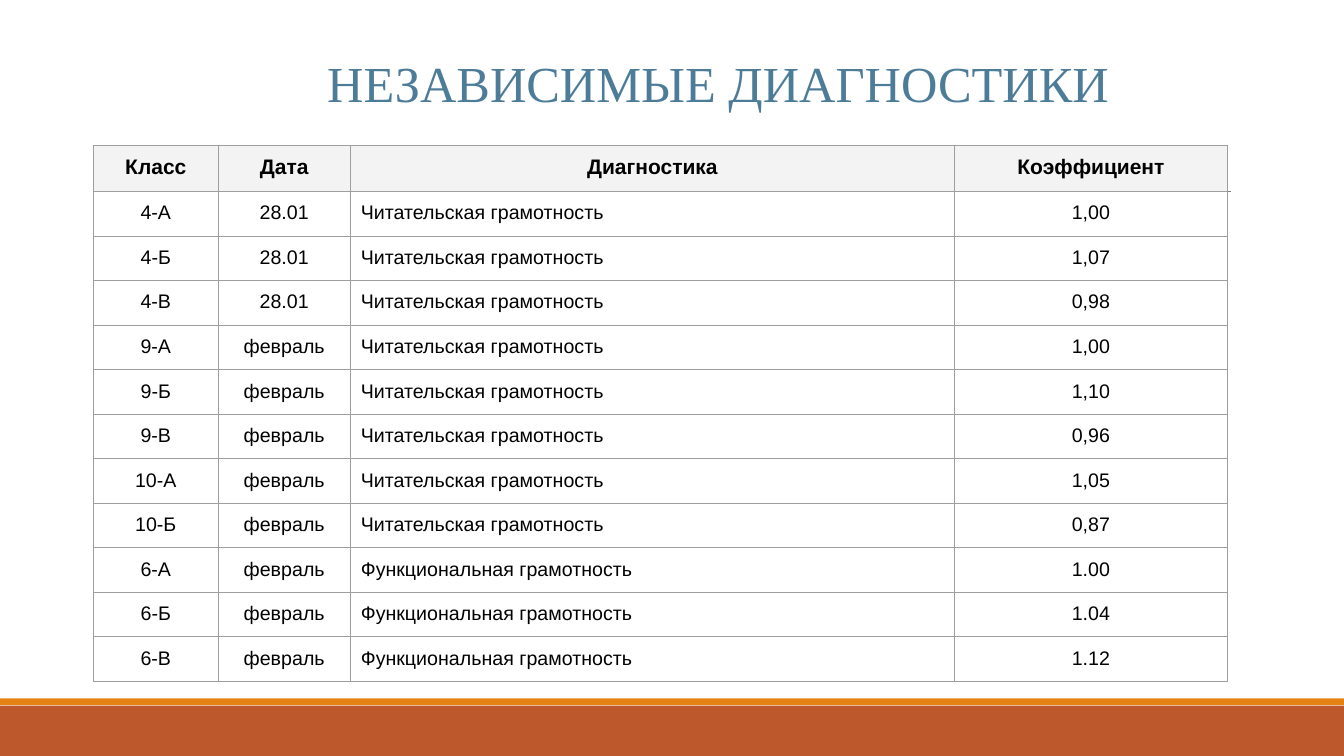
from lxml.etree import SubElement
from pptx import Presentation
from pptx.dml.color import RGBColor
from pptx.enum.shapes import MSO_CONNECTOR, MSO_SHAPE
from pptx.enum.text import MSO_ANCHOR, PP_ALIGN
from pptx.oxml.ns import qn
from pptx.util import Pt

RUST = RGBColor(0xBD, 0x58, 0x2C)
ORANGE = RGBColor(0xE4, 0x83, 0x12)
RULE_GREY = RGBColor(0x7F, 0x7F, 0x7F)
BORDER_GREY = RGBColor(0x9E, 0x9E, 0x9E)
HEADER_GREY = RGBColor(0xF3, 0xF3, 0xF3)
TITLE_BLUE = RGBColor(0x4D, 0x7C, 0x99)
BLACK = RGBColor(0, 0, 0)

HEADINGS = ("Класс", "Дата", "Диагностика", "Коэффициент")
READING = "Читательская грамотность"
FUNCTIONAL = "Функциональная грамотность"
DIAGNOSTICS = [
    ("28.01", READING, {"4-А": "1,00", "4-Б": "1,07", "4-В": "0,98"}),
    ("февраль", READING, {"9-А": "1,00", "9-Б": "1,10", "9-В": "0,96",
                          "10-А": "1,05", "10-Б": "0,87"}),
    ("февраль", FUNCTIONAL, {"6-А": "1.00", "6-Б": "1.04", "6-В": "1.12"}),
]


class DiagnosticsSlide:
    """Draws styled elements on one slide, with lengths in points."""

    title_font = "Times New Roman"
    table_font = "Arial"
    line_width = 0.75
    cell_margin = 7.5

    def __init__(self, slide):
        self.slide = slide

    def band(self, left, top, width, height, colour):
        stripe = self.slide.shapes.add_shape(
            MSO_SHAPE.RECTANGLE, Pt(left), Pt(top), Pt(width), Pt(height))
        stripe.shadow.inherit = False
        stripe.fill.solid()
        stripe.fill.fore_color.rgb = colour
        stripe.line.fill.background()

    def rule(self, left, right, top):
        divider = self.slide.shapes.add_connector(
            MSO_CONNECTOR.STRAIGHT, Pt(left), Pt(top), Pt(right), Pt(top))
        divider.line.color.rgb = RULE_GREY
        divider.line.width = Pt(self.line_width)
        SubElement(divider._element.spPr, qn("a:effectLst"))

    def title(self, text, left, top, width, height):
        frame = self.slide.shapes.add_textbox(
            Pt(left), Pt(top), Pt(width), Pt(height)).text_frame
        frame.word_wrap = True
        frame.vertical_anchor = MSO_ANCHOR.BOTTOM
        frame.margin_left = frame.margin_right = 0
        frame.margin_top = frame.margin_bottom = 0
        frame.text = text
        self.format_text(frame.paragraphs[0], PP_ALIGN.CENTER,
                         self.title_font, 36, TITLE_BLUE)

    def table(self, rows, left, top, widths, row_height):
        grid = self.slide.shapes.add_table(
            len(rows), len(widths), Pt(left), Pt(top),
            Pt(sum(widths)), Pt(row_height * len(rows))).table
        grid.horz_banding = False
        for column, width in zip(grid.columns, widths):
            column.width = Pt(width)
        for row_index, values in enumerate(rows):
            grid.rows[row_index].height = Pt(row_height)
            for column_index, value in enumerate(values):
                self.cell(grid.cell(row_index, column_index), value,
                          heading=row_index == 0,
                          centred=row_index == 0 or column_index != 2)

    def cell(self, cell, value, heading, centred):
        cell.margin_left = cell.margin_right = Pt(self.cell_margin)
        cell.margin_top = cell.margin_bottom = Pt(self.cell_margin)
        cell.text_frame.text = value
        self.format_text(cell.text_frame.paragraphs[0],
                         PP_ALIGN.CENTER if centred else PP_ALIGN.LEFT,
                         self.table_font, 15 if heading else 14, BLACK, heading)
        self.borders(cell)
        if heading:
            cell.fill.solid()
            cell.fill.fore_color.rgb = HEADER_GREY
        else:
            cell.fill.background()

    def borders(self, cell):
        properties = cell._tc.get_or_add_tcPr()
        for side in ("a:lnL", "a:lnR", "a:lnT", "a:lnB"):
            edge = SubElement(properties, qn(side), w=str(Pt(self.line_width)))
            fill = SubElement(edge, qn("a:solidFill"))
            SubElement(fill, qn("a:srgbClr"), val=str(BORDER_GREY))

    def format_text(self, paragraph, alignment, font, size, colour, bold=False):
        paragraph.alignment = alignment
        for run in paragraph.runs:
            run.font.name = font
            run.font.size = Pt(size)
            run.font.bold = bold
            run.font.color.rgb = colour


def main():
    presentation = Presentation()
    presentation.slide_width = Pt(960)
    presentation.slide_height = Pt(540)
    page = DiagnosticsSlide(
        presentation.slides.add_slide(presentation.slide_layouts[6]))

    page.band(0, 504, 960, 36, RUST)
    page.band(0, 498.8, 960, 5, ORANGE)
    page.rule(94, 879, 136.6)
    page.title("НЕЗАВИСИМЫЕ ДИАГНОСТИКИ", 78, 36, 870, 44.6)
    results = [(group, date, subject, ratio)
               for date, subject, ratios in DIAGNOSTICS
               for group, ratio in ratios.items()]
    page.table([HEADINGS, *results], 66.8, 103.9, (89, 94.5, 431.5, 195), 30)
    presentation.save("out.pptx")


if __name__ == "__main__":
    main()
